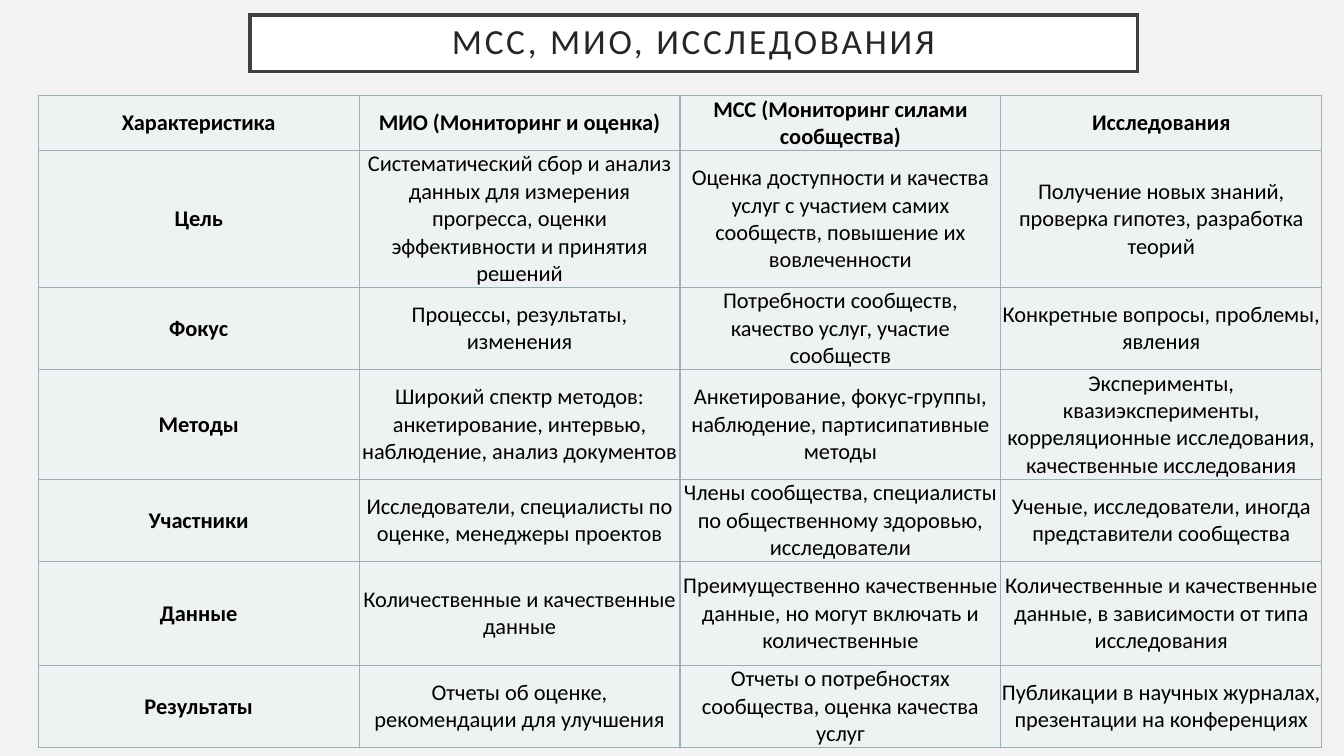
from dataclasses import dataclass

from lxml.etree import SubElement
from pptx import Presentation
from pptx.dml.color import RGBColor
from pptx.enum.text import MSO_ANCHOR, MSO_AUTO_SIZE, PP_ALIGN
from pptx.oxml.ns import qn
from pptx.slide import Slide
from pptx.table import _Cell
from pptx.text.text import TextFrame, _Run
from pptx.util import Inches, Pt

FONT = "Calibri"
PAGE_COLOR = RGBColor(0xF2, 0xF2, 0xF2)
WHITE = RGBColor(0xFF, 0xFF, 0xFF)
FRAME_COLOR = RGBColor(0x40, 0x40, 0x40)
TITLE_COLOR = RGBColor(0x26, 0x26, 0x26)
BLACK = RGBColor(0, 0, 0)
CELL_COLOR = RGBColor(0xEF, 0xF2, 0xF3)
GRID_COLOR = RGBColor(0x9B, 0xAF, 0xB5)

PAGE_WIDTH, PAGE_HEIGHT = 13.33, 7.5
TABLE_LEFT, TABLE_TOP, TABLE_WIDTH = 0.38, 0.95, 12.73


@dataclass(frozen=True)
class Row:
    """One table row: its height in inches, its heading and its entries."""

    height: float
    heading: str
    entries: tuple[str, str, str]
    all_bold: bool = False


ROWS = (
    Row(0.52, "Характеристика", (
        "МИО (Мониторинг и оценка)",
        "МСС (Мониторинг силами сообщества)",
        "Исследования",
    ), all_bold=True),
    Row(1.28, "Цель", (
        "Систематический сбор и анализ данных для измерения прогресса, "
        "оценки эффективности и принятия решений",
        "Оценка доступности и качества услуг с участием самих сообществ, "
        "повышение их вовлеченности",
        "Получение новых знаний, проверка гипотез, разработка теорий",
    )),
    Row(0.77, "Фокус", (
        "Процессы, результаты, изменения",
        "Потребности сообществ, качество услуг, участие сообществ",
        "Конкретные вопросы, проблемы, явления",
    )),
    Row(1.03, "Методы", (
        "Широкий спектр методов: анкетирование, интервью, наблюдение, анализ документов",
        "Анкетирование, фокус-группы, наблюдение, партисипативные методы",
        "Эксперименты, квазиэксперименты, корреляционные исследования, "
        "качественные исследования",
    )),
    Row(0.77, "Участники", (
        "Исследователи, специалисты по оценке, менеджеры проектов",
        "Члены сообщества, специалисты по общественному здоровью, исследователи",
        "Ученые, исследователи, иногда представители сообщества",
    )),
    Row(1.03, "Данные", (
        "Количественные и качественные данные",
        "Преимущественно качественные данные, но могут включать и количественные",
        "Количественные и качественные данные, в зависимости от типа исследования",
    )),
    Row(0.77, "Результаты", (
        "Отчеты об оценке, рекомендации для улучшения",
        "Отчеты о потребностях сообщества, оценка качества услуг",
        "Публикации в научных журналах, презентации на конференциях",
    )),
)


def add_centered_text(
    frame: TextFrame, text: str, size: float, color: RGBColor, bold: bool
) -> _Run:
    """Write one centred run in the frame's first paragraph."""
    para = frame.paragraphs[0]
    para.alignment = PP_ALIGN.CENTER
    span = para.add_run()
    span.text = text
    span.font.name = FONT
    span.font.size = Pt(size)
    span.font.bold = bold
    span.font.color.rgb = color
    return span


def set_margins(target: TextFrame | _Cell, inches: float) -> None:
    """Give all four sides the same inner margin."""
    for side in ("left", "top", "right", "bottom"):
        setattr(target, f"margin_{side}", Inches(inches))


def add_title(page: Slide, text: str) -> None:
    """Place and frame the title placeholder."""
    box = page.shapes.title
    box.left, box.top = Inches(2.48), Inches(0.15)
    box.width, box.height = Inches(8.8), Inches(0.56)
    box.fill.solid()
    box.fill.fore_color.rgb = WHITE
    box.line.color.rgb = FRAME_COLOR
    box.line.width = Pt(2.5)
    SubElement(box.line._get_or_add_ln(), qn("a:miter"), lim="800000")
    frame = box.text_frame
    frame.auto_size = MSO_AUTO_SIZE.NONE
    frame.word_wrap = True
    frame.vertical_anchor = MSO_ANCHOR.MIDDLE
    set_margins(frame, 0.2)
    span = add_centered_text(frame, text, 25.2, TITLE_COLOR, False)
    span.font._element.set("spc", "200")
    frame.paragraphs[0].line_spacing = 0.9


def add_borders(cell: _Cell) -> None:
    """Draw a thin line on each side of the cell."""
    properties = cell._tc.get_or_add_tcPr()
    for side in ("lnL", "lnR", "lnT", "lnB"):
        line = SubElement(properties, qn(f"a:{side}"), w=str(Pt(1)))
        fill = SubElement(line, qn("a:solidFill"))
        SubElement(fill, qn("a:srgbClr"), val=str(GRID_COLOR))


def fill_cell(cell: _Cell, text: str, bold: bool) -> None:
    """Format one cell and write its text."""
    add_borders(cell)
    cell.fill.solid()
    cell.fill.fore_color.rgb = CELL_COLOR
    cell.vertical_anchor = MSO_ANCHOR.MIDDLE
    set_margins(cell, 0)
    add_centered_text(cell.text_frame, text, 16, BLACK, bold)


def add_comparison(page: Slide, rows: tuple[Row, ...]) -> None:
    """Add the comparison table with equal columns."""
    column_count = 1 + len(rows[0].entries)
    table = page.shapes.add_table(
        len(rows), column_count, Inches(TABLE_LEFT), Inches(TABLE_TOP),
        Inches(TABLE_WIDTH), Inches(sum(row.height for row in rows)),
    ).table
    table.horz_banding = False
    for column in table.columns:
        column.width = Inches(TABLE_WIDTH / column_count)
    for row_index, row in enumerate(rows):
        table.rows[row_index].height = Inches(row.height)
        for column_index, text in enumerate((row.heading, *row.entries)):
            bold = row.all_bold or column_index == 0
            fill_cell(table.cell(row_index, column_index), text, bold)


def main() -> None:
    """Build and save the deck."""
    deck = Presentation()
    deck.slide_width, deck.slide_height = Inches(PAGE_WIDTH), Inches(PAGE_HEIGHT)
    page = deck.slides.add_slide(deck.slide_layouts.get_by_name("Title Only"))
    page.background.fill.solid()
    page.background.fill.fore_color.rgb = PAGE_COLOR
    add_title(page, "МСС, МИО, ИССЛЕДОВАНИЯ")
    add_comparison(page, ROWS)
    deck.save("out.pptx")


if __name__ == "__main__":
    main()
